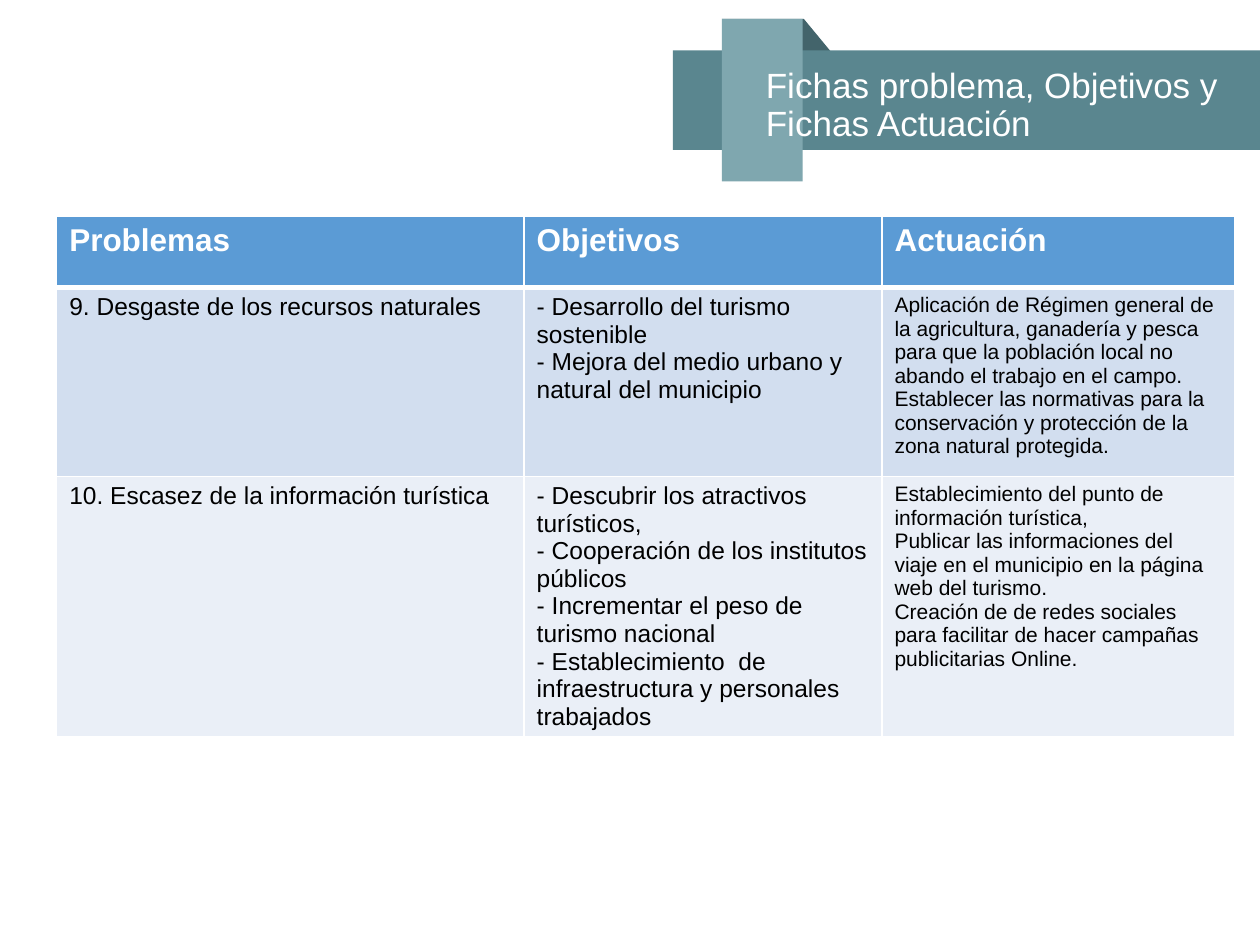
import pptx
import pptx.dml.color
import pptx.enum.shapes
import pptx.enum.text
import pptx.oxml.ns
import pptx.util
from lxml import etree

Inches = pptx.util.Inches
Pt = pptx.util.Pt

COLORS = {
    "fold": "43646B",
    "band": "5A868F",
    "ribbon": "7FA7AF",
    "header": "5B9BD5",
    "odd_row": "D2DEEF",
    "even_row": "EAEFF7",
    "white": "FFFFFF",
    "black": "000000",
}
FONT = "Arial"

COLUMN_WIDTHS = [3.71, 2.84, 2.8]
ROW_HEIGHTS = [0.56, 1.5, 2.06]
ROW_FILLS = ["header", "odd_row", "even_row"]
HEADER_FORMAT = {"size": Pt(18), "bold": True}
BODY_FORMATS = [{"size": Pt(size), "bold": False} for size in (14, 14, 12)]

ROWS = [
    [["Problemas"], ["Objetivos"], ["Actuación"]],
    [
        ["9. Desgaste de los recursos naturales"],
        ["- Desarrollo del turismo sostenible",
         "- Mejora del medio urbano y natural del municipio"],
        ["Aplicación de Régimen general de la agricultura, ganadería y pesca "
         "para que la población local no abando el trabajo en el campo. "
         "Establecer las normativas para la conservación y protección de la "
         "zona natural protegida."],
    ],
    [
        ["10. Escasez de la información turística"],
        ["- Descubrir los atractivos turísticos,",
         "- Cooperación de los institutos públicos",
         "- Incrementar el peso de turismo nacional",
         "- Establecimiento  de infraestructura y personales trabajados"],
        ["Establecimiento del punto de información turística,",
         "Publicar las informaciones del viaje en el municipio en la página "
         "web del turismo.",
         "Creación de de redes sociales para facilitar de hacer campañas "
         "publicitarias Online."],
    ],
]


def rgb(color):
    return pptx.dml.color.RGBColor.from_string(COLORS[color])


def paint(shape, color):
    """Give a shape a flat fill, with no outline or shadow."""
    shape.shadow.inherit = False
    shape.fill.solid()
    shape.fill.fore_color.rgb = rgb(color)
    shape.line.fill.background()


def add_rectangle(slide, left, top, width, height, color):
    rectangle = slide.shapes.add_shape(
        pptx.enum.shapes.MSO_SHAPE.RECTANGLE,
        Inches(left), Inches(top), Inches(width), Inches(height))
    paint(rectangle, color)


def add_polygon(slide, points, color):
    corners = [(Inches(x), Inches(y)) for x, y in points]
    builder = slide.shapes.build_freeform(*corners[0], scale=1.0)
    builder.add_line_segments(corners[1:], close=True)
    paint(builder.convert_to_shape(), color)


def write_paragraphs(frame, lines, color, font_format):
    for index, line in enumerate(lines):
        paragraph = frame.paragraphs[0] if index == 0 else frame.add_paragraph()
        font = paragraph.add_run().font
        paragraph.runs[0].text = line
        font.name = FONT
        font.color.rgb = rgb(color)
        for attribute, value in font_format.items():
            setattr(font, attribute, value)


def add_title(slide, title):
    title_box = slide.shapes.add_textbox(
        Inches(5.98), Inches(0.44), Inches(3.88), Inches(0.66))
    frame = title_box.text_frame
    frame_format = {
        "word_wrap": True,
        "vertical_anchor": pptx.enum.text.MSO_ANCHOR.TOP,
        "margin_left": Inches(0.1),
        "margin_top": Inches(0.1),
        "margin_right": Inches(0.1),
        "margin_bottom": Inches(0.1),
    }
    for attribute, value in frame_format.items():
        setattr(frame, attribute, value)
    write_paragraphs(frame, [title], "white", {"size": Pt(20)})
    frame.paragraphs[0].line_spacing = 0.9


def set_borders(cell, widths):
    """Draw white borders; widths maps each side (L, R, T, B) to points."""
    properties = cell._tc.get_or_add_tcPr()
    qn = pptx.oxml.ns.qn
    for side, width in widths.items():
        border = etree.SubElement(properties, qn(f"a:ln{side}"), w=str(Pt(width)))
        fill = etree.SubElement(border, qn("a:solidFill"))
        etree.SubElement(fill, qn("a:srgbClr"), val=COLORS["white"])


def add_problem_table(slide):
    table = slide.shapes.add_table(
        len(ROWS), len(COLUMN_WIDTHS), Inches(0.45), Inches(1.72),
        Inches(sum(COLUMN_WIDTHS)), Inches(sum(ROW_HEIGHTS))).table
    for column, width in zip(table.columns, COLUMN_WIDTHS):
        column.width = Inches(width)
    for row, height in zip(table.rows, ROW_HEIGHTS):
        row.height = Inches(height)

    for r, row_texts in enumerate(ROWS):
        is_header = r == 0
        widths = {"L": 1, "R": 1, "T": 3 if r == 1 else 1, "B": 3 if is_header else 1}
        for c, lines in enumerate(row_texts):
            cell = table.cell(r, c)
            set_borders(cell, widths)
            cell.fill.solid()
            cell.fill.fore_color.rgb = rgb(ROW_FILLS[r])
            write_paragraphs(
                cell.text_frame, lines, "white" if is_header else "black",
                HEADER_FORMAT if is_header else BODY_FORMATS[c])


def main():
    presentation = pptx.Presentation()
    presentation.slide_width = Inches(10)
    presentation.slide_height = Inches(7.5)
    slide = presentation.slides.add_slide(presentation.slide_layouts[6])

    add_polygon(slide, [(5.73, 0.15), (6.38, 0.15), (7, 0.9)], "fold")
    add_rectangle(slide, 5.34, 0.4, 4.66, 0.79, "band")
    add_rectangle(slide, 5.73, 0.15, 0.64, 1.29, "ribbon")
    add_problem_table(slide)
    add_title(slide, "Fichas problema, Objetivos y Fichas Actuación")

    presentation.save("out.pptx")


if __name__ == "__main__":
    main()
